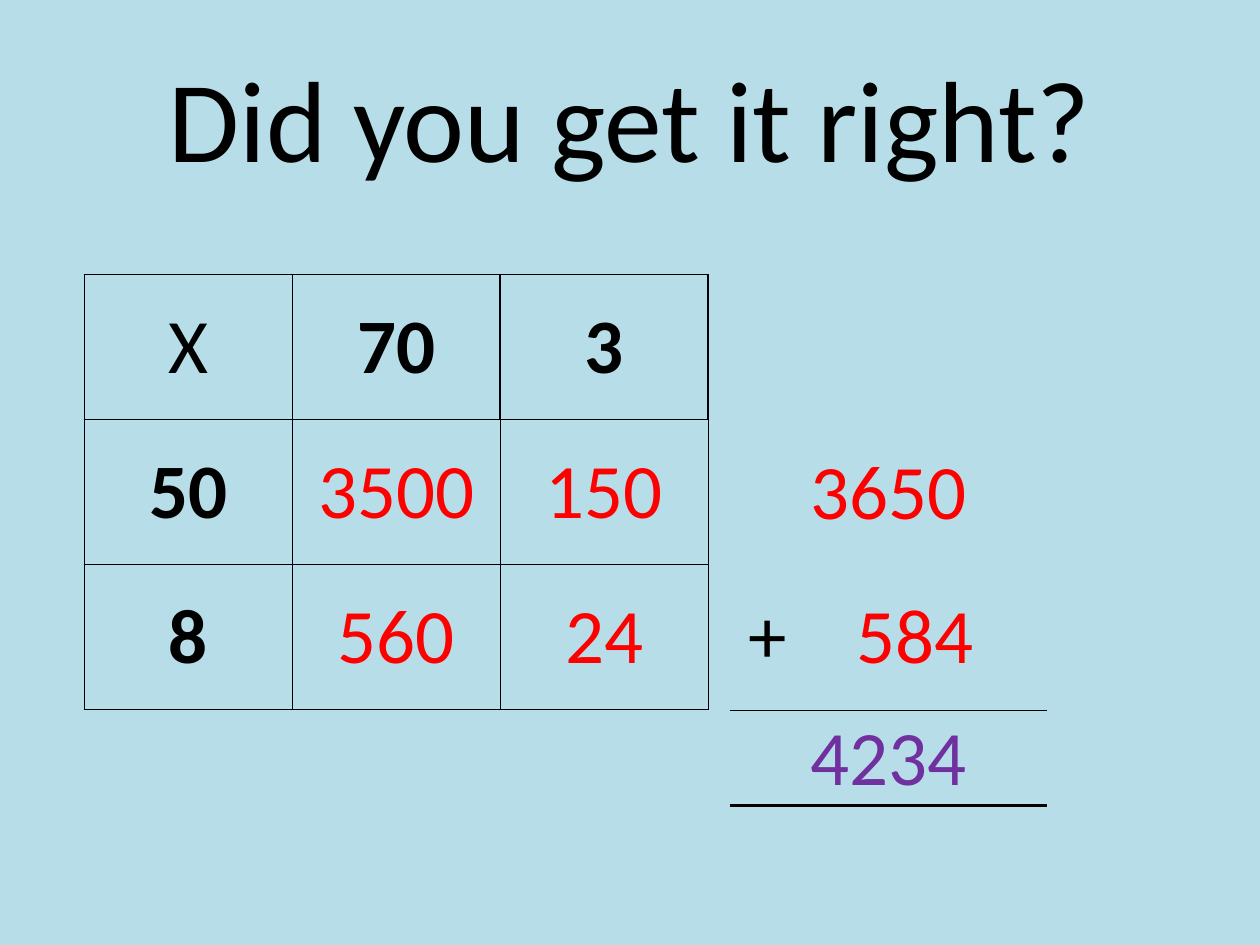
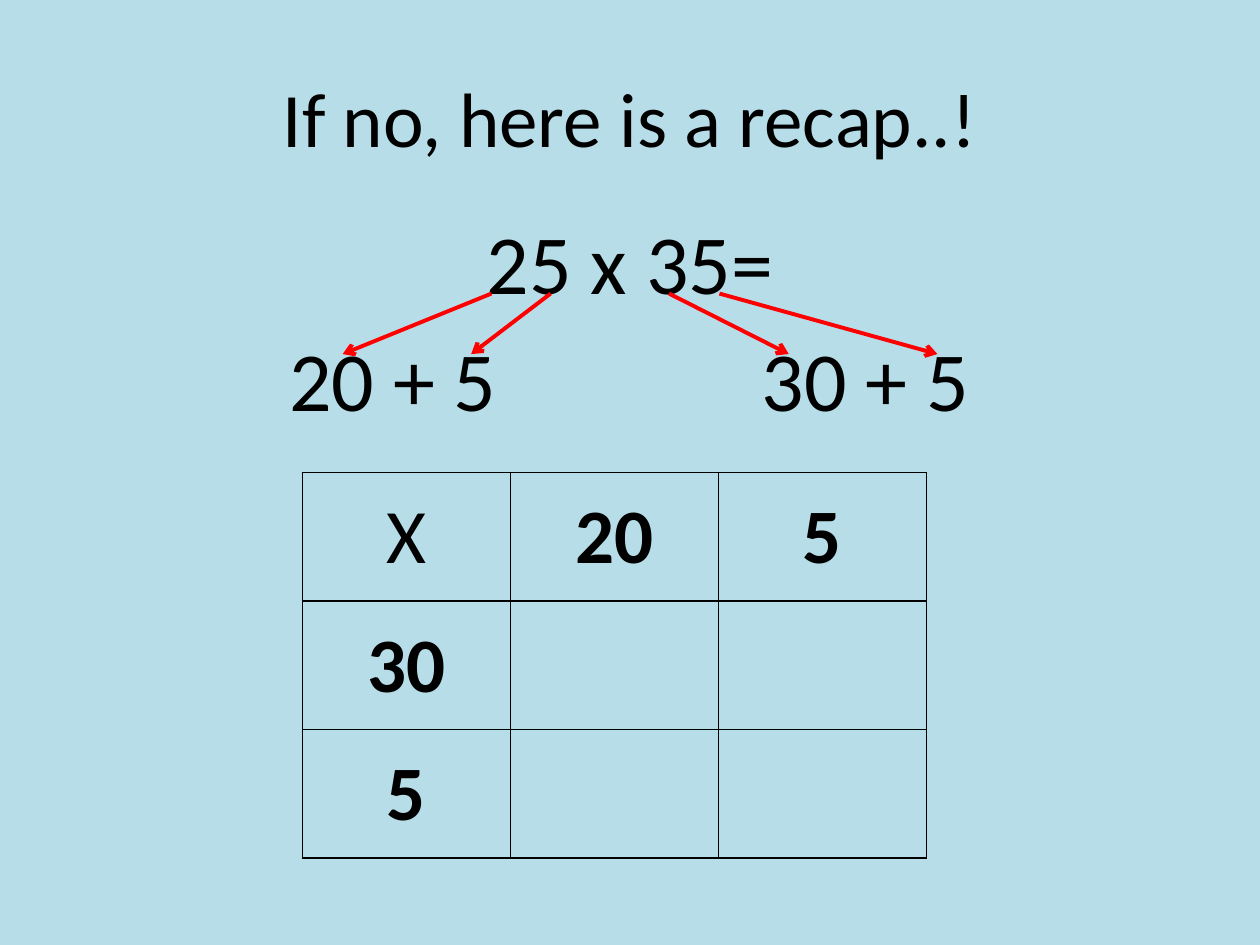
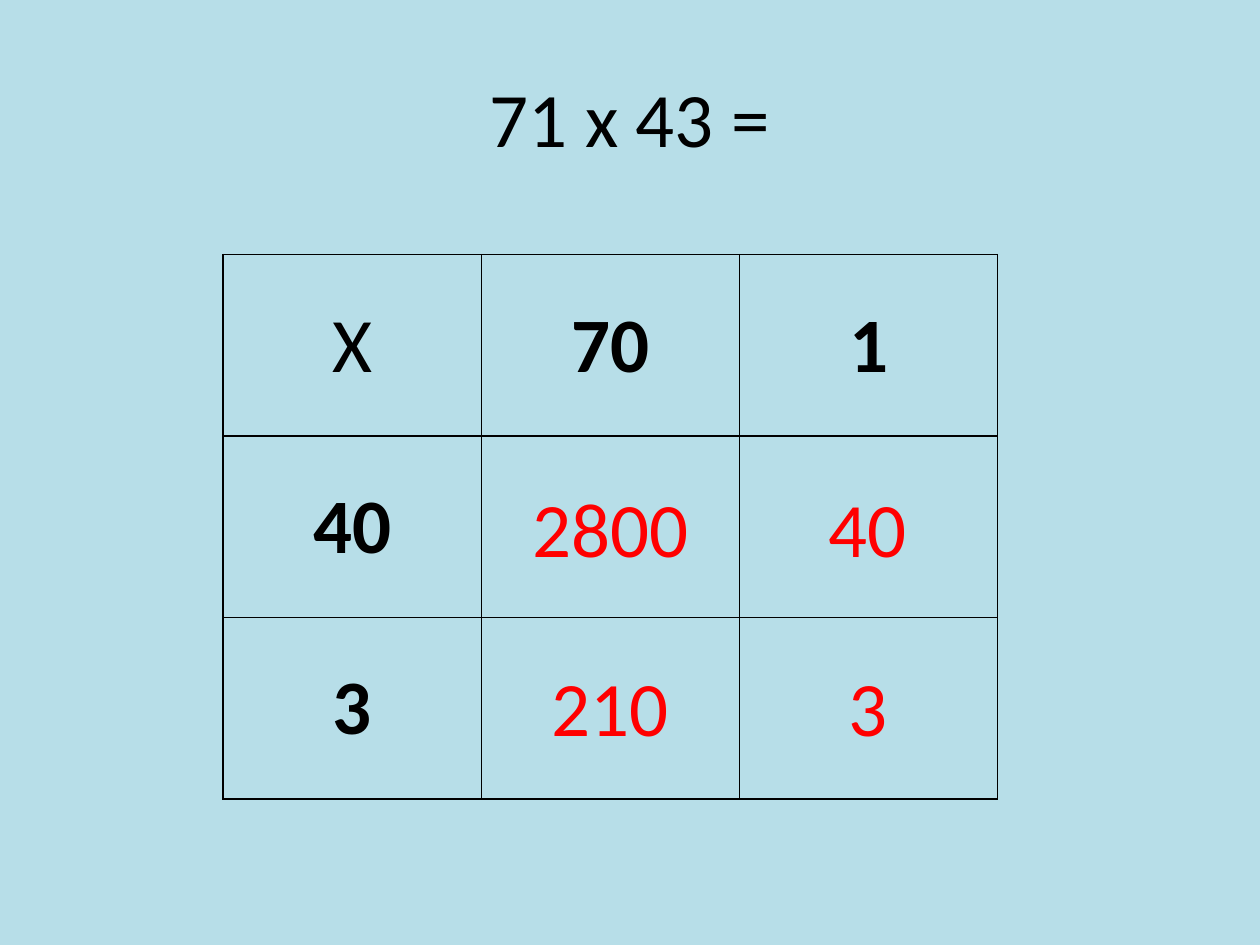
import pptx
import pptx.dml.color
import pptx.enum.shapes
import pptx.enum.text
import pptx.oxml
import pptx.oxml.ns
import pptx.util
from pptx.util import Inches

SKY = pptx.dml.color.RGBColor(0xB7, 0xDE, 0xE8)
BLACK = pptx.dml.color.RGBColor(0, 0, 0)
RED = pptx.dml.color.RGBColor(0xFF, 0, 0)
PURPLE = pptx.dml.color.RGBColor(0x70, 0x30, 0xA0)
CENTER = pptx.enum.text.PP_ALIGN.CENTER
LEFT = pptx.enum.text.PP_ALIGN.LEFT
MIDDLE = pptx.enum.text.MSO_ANCHOR.MIDDLE
FONT = "Calibri"
NO_GRID_STYLE = "{2D5ABB26-0587-4C30-8999-92F81FD0307C}"
COLUMN_LINES = (1, 1, 0.5, 0.5)
ROW_LINES = (1, 1, 0.5, 1)


def write(paragraph, text, size=44, color=BLACK, bold=False, align=CENTER):
    """Append formatted text to a paragraph."""
    paragraph.alignment = align
    run = paragraph.add_run()
    run.text = text
    run.font.name = FONT
    run.font.size = pptx.util.Pt(size)
    run.font.bold = bold
    run.font.color.rgb = color


def drawing_element(tag, content="", **attributes):
    """Build one DrawingML element."""
    listed = "".join(f' {key}="{value}"' for key, value in attributes.items())
    namespace = pptx.oxml.ns.nsdecls("a")
    return pptx.oxml.parse_xml(f"<a:{tag} {namespace}{listed}>{content}</a:{tag}>")


def set_tabs(paragraph, align, positions):
    """Give a paragraph tab stops at positions in inches."""
    stops = "".join(f'<a:tab pos="{Inches(pos)}" algn="{align}"/>' for pos in positions)
    paragraph._p.get_or_add_pPr().append(drawing_element("tabLst", stops))


def add_slide(deck, title, size=44):
    """Add a sky blue slide with a centred title."""
    slide = deck.slides.add_slide(deck.slide_layouts[6])
    slide.background.fill.solid()
    slide.background.fill.fore_color.rgb = SKY
    heading = slide.shapes.add_textbox(Inches(0.5), Inches(0.3), Inches(9), Inches(1.25))
    heading.text_frame.word_wrap = True
    heading.text_frame.vertical_anchor = MIDDLE
    write(heading.text_frame.paragraphs[0], title, size=size)
    return slide


def add_plain_table(slide, left, top, widths, heights):
    """Add a table without style, sized by its columns and rows."""
    frame = slide.shapes.add_table(
        len(heights), len(widths), Inches(left), Inches(top),
        Inches(sum(widths)), Inches(sum(heights)))
    for style in frame.element.iter(pptx.oxml.ns.qn("a:tableStyleId")):
        style.text = NO_GRID_STYLE
    table = frame.table
    table.first_row = table.horz_banding = False
    for column, width in zip(table.columns, widths):
        column.width = Inches(width)
    for row, height in zip(table.rows, heights):
        row.height = Inches(height)
    return table


def format_cell(cell, **borders):
    """Centre a cell vertically and draw its L, R, T and B borders in points."""
    cell.vertical_anchor = MIDDLE
    cell.margin_left = cell.margin_right = cell.margin_top = Inches(0.01)
    cell.margin_bottom = 0
    black_fill = f'<a:solidFill><a:srgbClr val="{BLACK}"/></a:solidFill>'
    for side in "LRTB":
        if side in borders:
            cell._tc.get_or_add_tcPr().append(
                drawing_element(f"ln{side}", black_fill, w=pptx.util.Pt(borders[side])))
    cell.fill.background()


def add_grid(slide, left, top, column_width, row_height, rows, header_line=0.5):
    """Draw a multiplication grid with bold factors and red products."""
    table = add_plain_table(slide, left, top, [column_width] * 3, [row_height] * 3)
    for r, row in enumerate(rows):
        lines = COLUMN_LINES if r else (1, 1, header_line, header_line)
        for c, value in enumerate(row):
            cell = table.cell(r, c)
            format_cell(cell, L=lines[c], R=lines[c + 1],
                        T=ROW_LINES[r], B=ROW_LINES[r + 1])
            if value:
                write(cell.text_frame.paragraphs[0], value,
                      color=RED if r and c else BLACK, bold=(r == 0) != (c == 0))


def add_column_sum(slide, left, top):
    """Add up the two row totals beside the grid."""
    table = add_plain_table(slide, left, top, [2.52], [1.1, 1.18, 0.75])
    first, second, total = (table.cell(r, 0) for r in range(3))
    format_cell(first)
    format_cell(second, B=0.5)
    format_cell(total, T=0.5, B=2)
    write(first.text_frame.paragraphs[0], "3650", color=RED)
    second.margin_left = Inches(0.15)
    addend = second.text_frame.paragraphs[0]
    write(addend, "+", align=LEFT)
    write(addend, "\t584", color=RED, align=LEFT)
    set_tabs(addend, "l", [0.86])
    write(total.text_frame.paragraphs[0], "4234", color=PURPLE)


def add_partition(slide, left, top, width, height):
    """Split both factors into tens and ones, with arrows."""
    box = slide.shapes.add_textbox(Inches(left), Inches(top), Inches(width), Inches(height))
    box.text_frame.word_wrap = True
    write(box.text_frame.paragraphs[0], "25 x 35=", size=48)
    parts = box.text_frame.add_paragraph()
    parts.space_before = pptx.util.Pt(9.6)
    write(parts, "\t20 + 5\t30 + 5", size=48, align=LEFT)
    set_tabs(parts, "ctr", [2.52, 6.27])
    for start, end in ((3.4, 2.22), (3.87, 3.24), (4.81, 5.76), (5.21, 6.94)):
        add_arrow(slide, left + start, top + 0.71, left + end, top + 1.19)


def add_arrow(slide, start_x, start_y, end_x, end_y):
    """Draw a red arrow."""
    arrow = slide.shapes.add_connector(
        pptx.enum.shapes.MSO_CONNECTOR.STRAIGHT,
        Inches(start_x), Inches(start_y), Inches(end_x), Inches(end_y))
    arrow.line.color.rgb = RED
    arrow.line.width = pptx.util.Pt(2.25)
    arrow.line._get_or_add_ln().append(drawing_element("tailEnd", type="arrow"))
    arrow._element.spPr.append(drawing_element("effectLst"))


def add_answer_cards(slide, left, top, answers):
    """Lay the answer cards over the empty grid cells."""
    for r, row in enumerate(answers):
        for c, answer in enumerate(row):
            card = slide.shapes.add_shape(
                pptx.enum.shapes.MSO_SHAPE.RECTANGLE,
                Inches(left + c * 2.04), Inches(top + r * 1.42), Inches(1.89), Inches(1.34))
            card.shadow.inherit = False
            card.fill.solid()
            card.fill.fore_color.rgb = SKY
            card.line.fill.background()
            card.text_frame.word_wrap = True
            card.text_frame.vertical_anchor = MIDDLE
            write(card.text_frame.paragraphs[0], answer, color=RED)


def main():
    """Build the three slides."""
    deck = pptx.Presentation()
    deck.slide_width, deck.slide_height = Inches(10), Inches(7.5)

    check = add_slide(deck, "Did you get it right?", size=66)
    add_grid(check, 0.67, 2.18, 1.65, 1.15,
             (("X", "70", "3"), ("50", "3500", "150"), ("8", "560", "24")), header_line=1)
    add_column_sum(check, 5.79, 3.36)

    recap = add_slide(deck, "If no, here is a recap..!")
    add_partition(recap, 0.5, 1.62, 9, 5.08)
    add_grid(recap, 2.4, 3.75, 1.65, 1.02,
             (("X", "20", "5"), ("30", "", ""), ("5", "", "")))

    example = add_slide(deck, "71 x 43 =")
    add_grid(example, 1.77, 2.02, 2.05, 1.44,
             (("X", "70", "1"), ("40", "", ""), ("3", "", "")))
    add_answer_cards(example, 3.9, 3.51, (("2800", "40"), ("210", "3")))

    deck.save("out.pptx")


if __name__ == "__main__":
    main()
